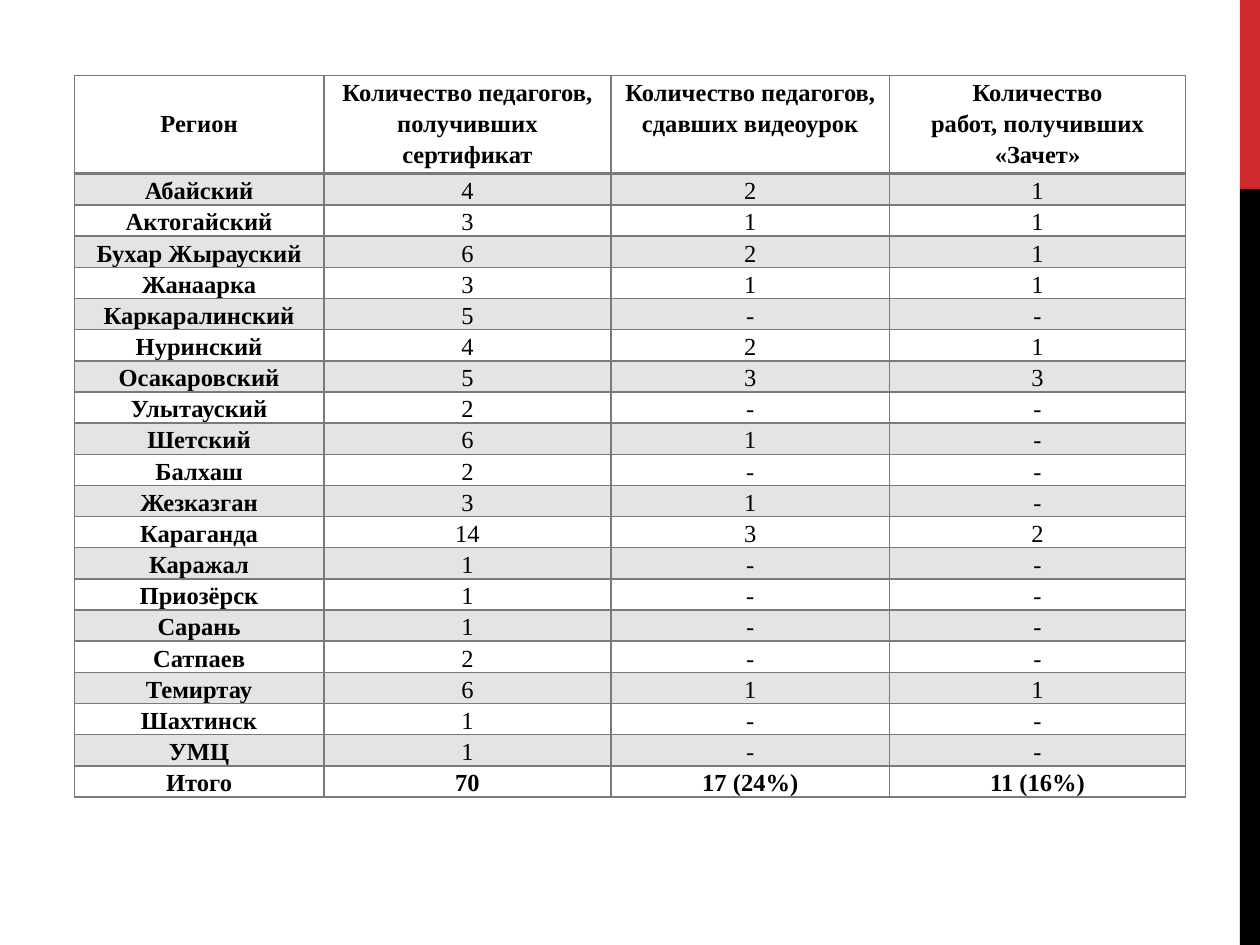
import pptx
import pptx.dml.color
import pptx.enum.shapes
import pptx.enum.text
import pptx.oxml.ns
import pptx.util
from lxml import etree

Inches, Pt = pptx.util.Inches, pptx.util.Pt
qn = pptx.oxml.ns.qn

WIDTH, HEIGHT = 10, 7.5
BAR_LEFT = 9.84
RED, BLACK, GREY = "D1282E", "000000", "7A7A7A"
FONT, FONT_SIZE = "Times New Roman", 14
LINE_SPACING, LINE_HEIGHT = 1.15, 0.25
TABLE_LEFT, TABLE_TOP = 0.59, 0.6
COLUMN_WIDTHS = [1.98, 2.28, 2.21, 2.35]
HEADER_HEIGHT, ROW_HEIGHT = 0.78, 0.23

HEADER = [
    "Регион",
    "Количество педагогов, получивших сертификат",
    "Количество педагогов, сдавших видеоурок",
    "Количество\nработ, получивших\n«Зачет»",
]
REGIONS = [
    ("Абайский", "4", "2", "1"),
    ("Актогайский", "3", "1", "1"),
    ("Бухар Жырауский", "6", "2", "1"),
    ("Жанаарка", "3", "1", "1"),
    ("Каркаралинский", "5", "-", "-"),
    ("Нуринский", "4", "2", "1"),
    ("Осакаровский", "5", "3", "3"),
    ("Улытауский", "2", "-", "-"),
    ("Шетский", "6", "1", "-"),
    ("Балхаш", "2", "-", "-"),
    ("Жезказган", "3", "1", "-"),
    ("Караганда", "14", "3", "2"),
    ("Каражал", "1", "-", "-"),
    ("Приозёрск", "1", "-", "-"),
    ("Сарань", "1", "-", "-"),
    ("Сатпаев", "2", "-", "-"),
    ("Темиртау", "6", "1", "1"),
    ("Шахтинск", "1", "-", "-"),
    ("УМЦ", "1", "-", "-"),
]
TOTAL = ("Итого", "70", "17 (24%)", "11 (16%)")


def color(value):
    return pptx.dml.color.RGBColor.from_string(value)


def add_bar(page, top, height, fill):
    bar = page.shapes.add_shape(
        pptx.enum.shapes.MSO_SHAPE.RECTANGLE,
        Inches(BAR_LEFT), Inches(top), Inches(WIDTH - BAR_LEFT), Inches(height))
    bar.shadow.inherit = False
    bar.fill.solid()
    bar.fill.fore_color.rgb = color(fill)
    bar.line.fill.background()


def set_borders(cell, top, bottom):
    """Draw grey lines round the cell; top and bottom are widths in points."""
    properties = cell._tc.get_or_add_tcPr()
    for side, width in (("L", 1), ("R", 1), ("T", top), ("B", bottom)):
        line = etree.SubElement(properties, qn(f"a:ln{side}"), w=str(Pt(width)))
        fill = etree.SubElement(line, qn("a:solidFill"))
        etree.SubElement(fill, qn("a:srgbClr"), val=GREY)


def set_fill(cell, shaded):
    if not shaded:
        cell.fill.background()
        return
    cell.fill.solid()
    cell.fill.fore_color.rgb = color(GREY)
    tint = cell._tc.tcPr.find(qn("a:solidFill")).find(qn("a:srgbClr"))
    etree.SubElement(tint, qn("a:alpha"), val="20000")


def set_text(cell, text, bold):
    cell.margin_left = cell.margin_right = Inches(0.05)
    cell.margin_top = cell.margin_bottom = 0
    cell.text_frame.text = text
    for para in cell.text_frame.paragraphs:
        para.alignment = pptx.enum.text.PP_ALIGN.CENTER
        para.line_spacing = LINE_SPACING
        for span in para.runs:
            span.font.name = FONT
            span.font.size = Pt(FONT_SIZE)
            span.font.bold = bold
            span.font.color.rgb = color(BLACK)


def add_region_table(page):
    rows = [HEADER, *REGIONS, TOTAL]
    last = len(rows) - 1
    table = page.shapes.add_table(
        len(rows), len(HEADER), Inches(TABLE_LEFT), Inches(TABLE_TOP),
        Inches(sum(COLUMN_WIDTHS)),
        Inches(HEADER_HEIGHT + last * ROW_HEIGHT)).table
    table.first_row = table.horz_banding = False
    for column, width in zip(table.columns, COLUMN_WIDTHS):
        column.width = Inches(width)
    for r, values in enumerate(rows):
        table.rows[r].height = Inches(ROW_HEIGHT if r else HEADER_HEIGHT)
        for c, text in enumerate(values):
            cell = table.cell(r, c)
            set_text(cell, text, bold=c == 0 or r in (0, last))
            set_borders(cell, top=2 if r == 1 else 1, bottom=2 if r == 0 else 1)
            set_fill(cell, shaded=r % 2 == 1)
    # The short heading sits on the second line of the header row.
    table.cell(0, 0).margin_top = Inches(LINE_HEIGHT)


def main():
    deck = pptx.Presentation()
    deck.slide_width, deck.slide_height = Inches(WIDTH), Inches(HEIGHT)
    page = deck.slides.add_slide(deck.slide_layouts[6])
    add_bar(page, 0, HEIGHT / 5, RED)
    add_bar(page, HEIGHT / 5, HEIGHT * 4 / 5, BLACK)
    add_region_table(page)
    deck.save("out.pptx")


if __name__ == "__main__":
    main()
